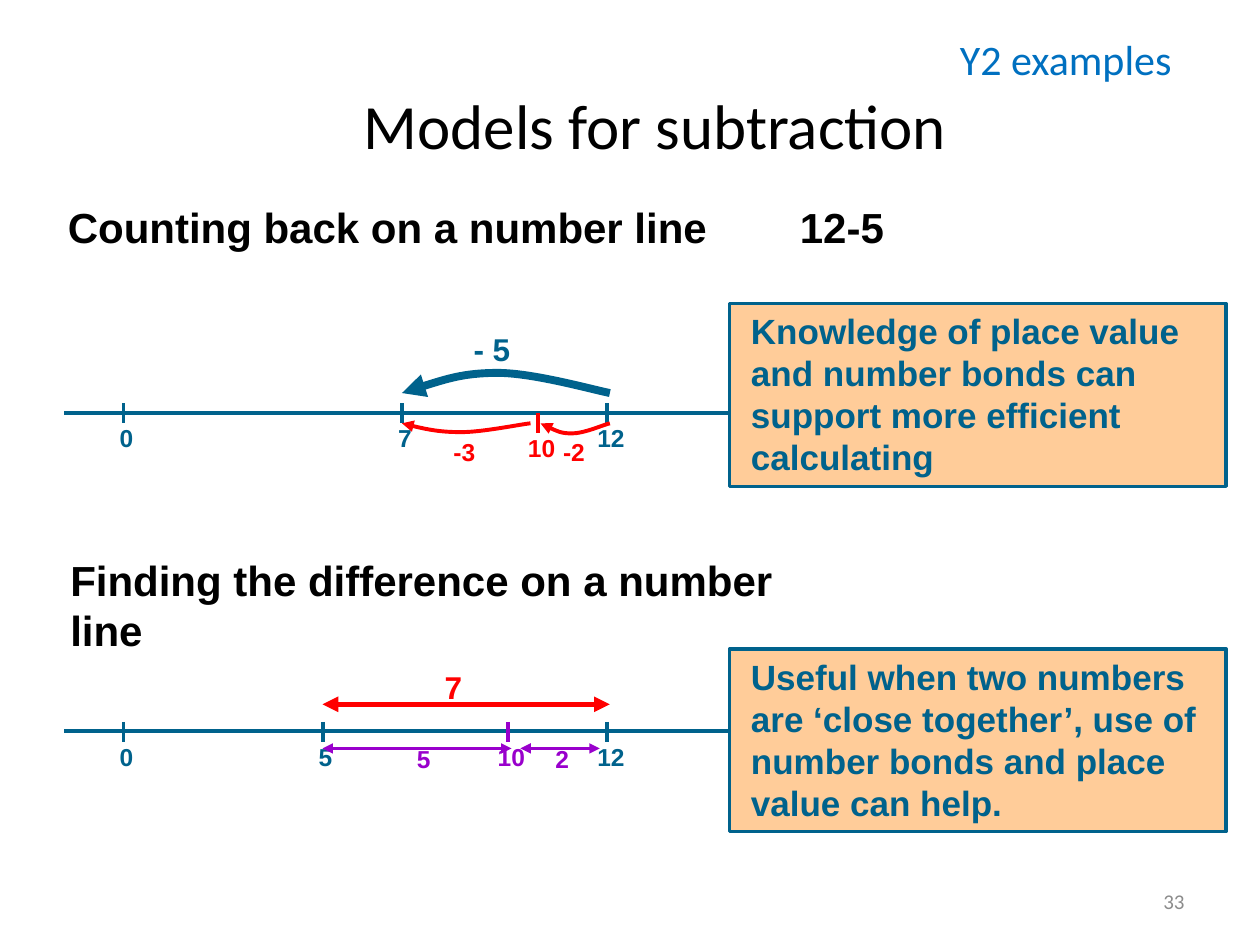
from dataclasses import dataclass

import pptx
import pptx.dml.color
import pptx.enum.shapes
import pptx.enum.text
import pptx.oxml
import pptx.oxml.ns
import pptx.util

Inches, Pt = pptx.util.Inches, pptx.util.Pt
ALIGN, ANCHOR = pptx.enum.text.PP_ALIGN, pptx.enum.text.MSO_ANCHOR
qn = pptx.oxml.ns.qn
BLUE, RED, PURPLE, PEACH = "00628C", "FF0000", "9900CC", "FFCC99"
TICK_HEIGHT = 0.16


@dataclass
class Tick:
    value: int
    x: float
    top: float
    color: str = BLUE


@dataclass
class Jump:
    """A curved arrow; points are the start, then three per Bézier segment."""
    points: list
    color: str
    width: float


@dataclass
class Span:
    x1: float
    x2: float
    y: float
    color: str
    width: float


@dataclass
class JumpLabel:
    text: str
    x: float
    y: float
    width: float
    size: int
    color: str


@dataclass
class Note:
    text: str
    top: float


def rgb(color: str):
    return pptx.dml.color.RGBColor.from_string(color)


def write(tf, text: str, size=14, color=BLUE, font="Arial", bold=True,
          align=ALIGN.LEFT, anchor=ANCHOR.TOP, margins=(0.1, 0.05), tab=None):
    """Fill a text frame with one formatted paragraph."""
    tf.word_wrap = True
    tf.vertical_anchor = anchor
    tf.margin_left = Inches(margins[0])
    tf.margin_top = Inches(margins[1])
    p = tf.paragraphs[0]
    p.alignment = align
    if tab:
        tabs = pptx.oxml.parse_xml(
            f'<a:tabLst {pptx.oxml.ns.nsdecls("a")}>'
            f'<a:tab pos="{Inches(tab)}" algn="l"/></a:tabLst>')
        p._p.get_or_add_pPr().append(tabs)
    r = p.add_run()
    r.text = text
    r.font.name, r.font.size, r.font.bold = font, Pt(size), bold
    r.font.color.rgb = rgb(color)


def add_text(slide, text: str, x: float, y: float, w: float, h: float, **fmt):
    sp = slide.shapes.add_textbox(Inches(x), Inches(y), Inches(w), Inches(h))
    write(sp.text_frame, text, **fmt)


def style_line(sp, color: str, width: float, ends=()):
    """Set colour, width and arrowheads ('headEnd', 'tailEnd')."""
    sp.line.color.rgb = rgb(color)
    sp.line.width = Pt(width)
    ln = sp.line._get_or_add_ln()
    for end in ends:
        ln.append(ln.makeelement(qn(f"a:{end}"), {"type": "triangle"}))


def add_line(slide, x1: float, y1: float, x2: float, y2: float,
             color=BLUE, width=2.25, ends=()):
    sp = slide.shapes.add_connector(
        pptx.enum.shapes.MSO_CONNECTOR.STRAIGHT,
        Inches(x1), Inches(y1), Inches(x2), Inches(y2))
    style_line(sp, color, width, ends)
    sp._element.spPr.append(sp._element.makeelement(qn("a:effectLst"), {}))


def add_tick(slide, tick: Tick):
    bottom = tick.top + TICK_HEIGHT
    add_line(slide, tick.x, tick.top, tick.x, bottom, color=tick.color)
    offset, width = (0.08, 0.24) if tick.value < 10 else (0.13, 0.39)
    add_text(slide, str(tick.value), tick.x - offset, bottom, width, 0.23,
             color=tick.color, margins=(0.05, 0))


def add_jump(slide, jump: Jump):
    start, *rest = [(Inches(x), Inches(y)) for x, y in jump.points]
    builder = slide.shapes.build_freeform(*start)
    builder.add_line_segments(rest, close=False)
    sp = builder.convert_to_shape()
    sp.shadow.inherit = False
    sp.fill.background()
    style_line(sp, jump.color, jump.width, ["headEnd"])
    # Turn every three line points into one cubic curve
    steps = list(sp._element.iter(qn("a:lnTo")))
    for i in range(0, len(steps), 3):
        curve = steps[i].makeelement(qn("a:cubicBezTo"), {})
        steps[i].addprevious(curve)
        for step in steps[i:i + 3]:
            curve.append(step[0])
            step.getparent().remove(step)


def add_span(slide, span: Span):
    add_line(slide, span.x1, span.y, span.x2, span.y, span.color, span.width,
             ["headEnd", "tailEnd"])


def add_jump_label(slide, label: JumpLabel):
    add_text(slide, label.text, label.x, label.y, label.width,
             0.4 if label.size > 14 else 0.33, size=label.size, color=label.color)


def add_note(slide, note: Note):
    sp = slide.shapes.add_shape(
        pptx.enum.shapes.MSO_SHAPE.RECTANGLE,
        Inches(5.79), Inches(note.top), Inches(3.94), Inches(1.45))
    sp.shadow.inherit = False
    sp.fill.solid()
    sp.fill.fore_color.rgb = rgb(PEACH)
    style_line(sp, BLUE, 2)
    write(sp.text_frame, note.text, size=20, margins=(0.17, 0.05))


TICKS = [
    Tick(0, 0.98, 3.2), Tick(7, 3.19, 3.2), Tick(12, 4.82, 3.2),
    Tick(10, 4.27, 3.28, RED),
    Tick(0, 0.98, 5.73), Tick(5, 2.56, 5.73), Tick(12, 4.82, 5.73),
    Tick(10, 4.03, 5.73, PURPLE),
]
JUMPS = [
    Jump([(3.19, 3.12), (3.43, 3.04), (3.68, 2.96), (3.95, 2.96),
          (4.23, 2.96), (4.69, 3.09), (4.84, 3.12)], BLUE, 4.5),
    Jump([(4.29, 3.36), (4.37, 3.4), (4.45, 3.44), (4.54, 3.44),
          (4.64, 3.44), (4.79, 3.37), (4.84, 3.36)], RED, 2.25),
    Jump([(3.19, 3.36), (3.34, 3.4), (3.49, 3.43), (3.66, 3.43),
          (3.83, 3.43), (4.12, 3.37), (4.21, 3.36)], RED, 2.25),
]
SPANS = [
    Span(2.56, 4.84, 5.59, RED, 3),
    Span(2.56, 4.06, 5.94, PURPLE, 1.5),
    Span(4.13, 4.76, 5.94, PURPLE, 1.5),
]
JUMP_LABELS = [
    JumpLabel("- 5", 3.66, 2.57, 0.71, 18, BLUE),
    JumpLabel("-2", 4.37, 3.42, 0.39, 14, RED),
    JumpLabel("-3", 3.5, 3.42, 0.55, 14, RED),
    JumpLabel("7", 3.43, 5.25, 0.39, 18, RED),
    JumpLabel("5", 3.21, 5.86, 0.38, 14, PURPLE),
    JumpLabel("2", 4.31, 5.86, 0.3, 14, PURPLE),
]
NOTES = [
    Note("Knowledge of place value and number bonds can support more "
         "efficient calculating", 2.41),
    Note("Useful when two numbers are ‘close together’, use of number bonds "
         "and place value can help.", 5.15),
]


def main():
    prs = pptx.Presentation()
    prs.slide_width, prs.slide_height = Inches(10), Inches(7.5)
    slide = prs.slides.add_slide(prs.slide_layouts[5])

    # Title and headings
    title = slide.shapes.title
    title.left, title.top = Inches(2.01), Inches(0.6)
    title.width, title.height = Inches(6.38), Inches(0.78)
    write(title.text_frame, "Models for subtraction", size=36, color="000000",
          font="Calibri", bold=False, align=ALIGN.CENTER, anchor=ANCHOR.MIDDLE)
    add_text(slide, "Counting back on a number line\t12-5", 0.44, 1.55, 6.74, 0.5,
             size=24, color="000000", tab=5.81)
    add_text(slide, "Finding the difference on a number line", 0.46, 4.35, 6.2, 0.5,
             size=24, color="000000")

    # Number lines with their jumps and notes
    for y in (3.28, 5.8):
        add_line(slide, 0.51, y, 7.44, y)
    for draw, items in ((add_tick, TICKS), (add_jump, JUMPS), (add_span, SPANS),
                        (add_jump_label, JUMP_LABELS), (add_note, NOTES)):
        for item in items:
            draw(slide, item)

    # Slide number and year label
    add_text(slide, "33", 7.17, 6.95, 2.33, 0.4, size=12, color="8C8C8C",
             font="Calibri", bold=False, align=ALIGN.RIGHT, anchor=ANCHOR.MIDDLE)
    add_text(slide, "Y2 examples", 7.52, 0.22, 2.48, 0.5, size=24, color="0070C0",
             font="Calibri", bold=False)
    prs.save("out.pptx")


if __name__ == "__main__":
    main()
